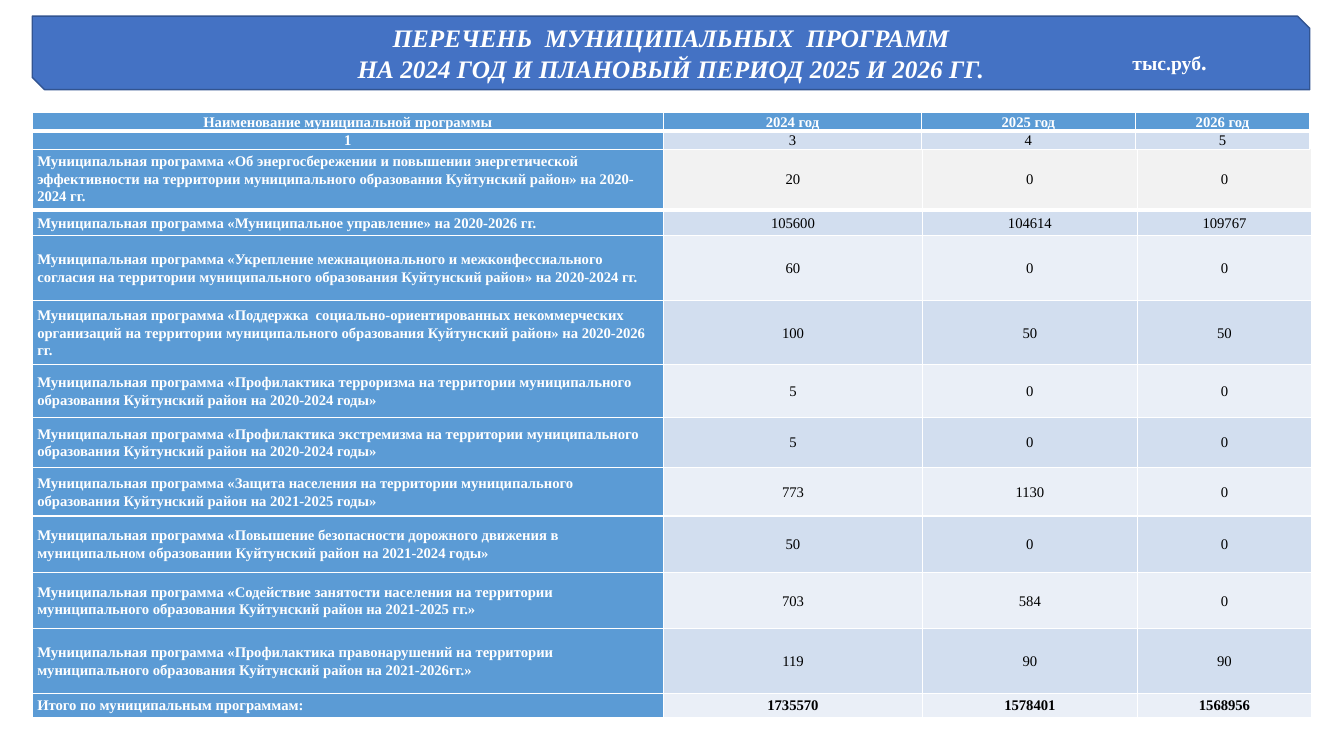
from lxml import etree
from pptx import Presentation
from pptx.dml.color import RGBColor
from pptx.enum.shapes import MSO_SHAPE
from pptx.enum.text import MSO_ANCHOR, MSO_AUTO_SIZE, PP_ALIGN
from pptx.oxml.ns import qn
from pptx.util import Inches, Pt

SNIPPED = MSO_SHAPE.SNIP_2_DIAG_RECTANGLE
MIDDLE, BOTTOM, TOP = MSO_ANCHOR.MIDDLE, MSO_ANCHOR.BOTTOM, MSO_ANCHOR.TOP
LEFT, CENTER, RIGHT = PP_ALIGN.LEFT, PP_ALIGN.CENTER, PP_ALIGN.RIGHT
NO_AUTOFIT = MSO_AUTO_SIZE.NONE

WHITE = RGBColor(0xFF, 0xFF, 0xFF)
BLACK = RGBColor(0, 0, 0)
BANNER_BLUE = RGBColor(0x44, 0x72, 0xC4)
BANNER_EDGE = RGBColor(0x32, 0x54, 0x91)
NAME_BLUE = RGBColor(0x5B, 0x9B, 0xD5)
GREY = RGBColor(0xF2, 0xF2, 0xF2)
BAND_DARK = RGBColor(0xD2, 0xDE, 0xEF)
BAND_LIGHT = RGBColor(0xEA, 0xEF, 0xF7)
FONT = "Times New Roman"

TITLE = ["ПЕРЕЧЕНЬ  МУНИЦИПАЛЬНЫХ  ПРОГРАММ",
         "НА 2024 ГОД И ПЛАНОВЫЙ ПЕРИОД 2025 И 2026 ГГ."]
UNIT = [("тыс.руб", 14), (".", 16)]

HEADER = [
    ("Наименование муниципальной программы", "2024 год", "2025 год", "2026 год"),
    ("1", "3", "4", "5"),
]
HEADER_COLUMNS = [6.26, 2.56, 2.12, 1.73]
HEADER_HEIGHTS = [0.18, 0.18]

PROGRAMS = [
    ("Муниципальная программа «Об энергосбережении и повышении энергетической эффективности "
     "на территории муниципального образования Куйтунский район» на 2020-2024 гг.",
     "20", "0", "0"),
    ("Муниципальная программа «Муниципальное управление» на 2020-2026 гг.",
     "105600", "104614", "109767"),
    ("Муниципальная программа «Укрепление межнационального и межконфессиального согласия "
     "на территории муниципального образования Куйтунский район» на 2020-2024 гг.",
     "60", "0", "0"),
    ("Муниципальная программа «Поддержка  социально-ориентированных некоммерческих организаций "
     "на территории муниципального образования Куйтунский район» на 2020-2026 гг.",
     "100", "50", "50"),
    ("Муниципальная программа «Профилактика терроризма на территории муниципального "
     "образования Куйтунский район на 2020-2024 годы»", "5", "0", "0"),
    ("Муниципальная программа «Профилактика экстремизма на территории муниципального "
     "образования Куйтунский район на 2020-2024 годы»", "5", "0", "0"),
    ("Муниципальная программа «Защита населения на территории муниципального "
     "образования Куйтунский район на 2021-2025 годы»", "773", "1130", "0"),
    ("Муниципальная программа «Повышение безопасности дорожного движения в муниципальном "
     "образовании Куйтунский район на 2021-2024 годы»", "50", "0", "0"),
    ("Муниципальная программа «Содействие занятости населения на территории муниципального "
     "образования Куйтунский район на 2021-2025 гг.»", "703", "584", "0"),
    ("Муниципальная программа «Профилактика правонарушений на территории муниципального "
     "образования Куйтунский район на 2021-2026гг.»", "119", "90", "90"),
    ("Итого по муниципальным программам:", "1735570", "1578401", "1568956"),
]
PROGRAM_COLUMNS = [6.26, 2.57, 2.13, 1.73]
PROGRAM_HEIGHTS = [0.61, 0.26, 0.64, 0.64, 0.52, 0.5, 0.48, 0.56, 0.56, 0.64, 0.24]

BANNER_BOX = [Inches(v) for v in (0.32, 0.16, 12.67, 0.73)]
TABLE_LEFT = 0.32


def set_font(font, size, color=WHITE, bold=True, italic=False):
    font.name, font.size, font.bold, font.italic = FONT, Pt(size), bold, italic
    font.color.rgb = color


def set_borders(cell, bottom_width):
    properties = cell._tc.get_or_add_tcPr()
    widths = {"a:lnL": 1, "a:lnR": 1, "a:lnT": 1, "a:lnB": bottom_width}
    for position, (side, width) in enumerate(widths.items()):
        line = etree.Element(qn(side), w=str(Pt(width)))
        fill = etree.SubElement(line, qn("a:solidFill"))
        etree.SubElement(fill, qn("a:srgbClr"), val=str(WHITE))
        properties.insert(position, line)


def style_cell(cell, text, fill, color, bold, align, inset, anchor, bottom_width):
    cell.text = text
    cell.margin_left = cell.margin_right = Inches(inset)
    cell.margin_top = cell.margin_bottom = 0
    cell.vertical_anchor = anchor
    paragraph = cell.text_frame.paragraphs[0]
    paragraph.alignment = align
    paragraph.line_spacing = 1.07
    set_font(paragraph.font, 10.5, color, bold)
    cell.fill.solid()
    cell.fill.fore_color.rgb = fill
    set_borders(cell, bottom_width)


def add_grid(slide, top, columns, heights):
    grid = slide.shapes.add_table(
        len(heights), len(columns), Inches(TABLE_LEFT), Inches(top),
        Inches(sum(columns)), Inches(sum(heights))).table
    grid.first_row = grid.horz_banding = False
    for column, width in zip(grid.columns, columns):
        column.width = Inches(width)
    for row, height in zip(grid.rows, heights):
        row.height = Inches(height)
    return grid


def add_banner(slide):
    banner = slide.shapes.add_shape(SNIPPED, *BANNER_BOX)
    banner.shadow.inherit = False
    banner.fill.solid()
    banner.fill.fore_color.rgb = BANNER_BLUE
    banner.line.color.rgb = BANNER_EDGE
    banner.line.width = Pt(1)
    frame = banner.text_frame
    frame.vertical_anchor = BOTTOM
    frame.margin_right, frame.margin_bottom = Inches(0.96), Inches(0.08)
    unit = frame.paragraphs[0]
    unit.alignment = RIGHT
    for text, size in UNIT:
        run = unit.add_run()
        run.text = text
        set_font(run.font, size)

    title = slide.shapes.title
    title.left, title.top, title.width, title.height = BANNER_BOX
    frame = title.text_frame
    frame.text = "\n".join(TITLE)
    frame.auto_size = NO_AUTOFIT
    frame.vertical_anchor = MIDDLE
    for paragraph in frame.paragraphs:
        paragraph.alignment = CENTER
        set_font(paragraph.font, 18, italic=True)
    title._element.addprevious(banner._element)


def add_programs(slide):
    grid = add_grid(slide, 1.47, PROGRAM_COLUMNS, PROGRAM_HEIGHTS)
    for r, program in enumerate(PROGRAMS):
        band = GREY if r == 0 else BAND_DARK if r % 2 else BAND_LIGHT
        is_total = r == len(PROGRAMS) - 1
        for c, text in enumerate(program):
            look = (band, BLACK, is_total, CENTER) if c else (NAME_BLUE, WHITE, True, LEFT)
            style_cell(grid.cell(r, c), text, *look, 0.05, MIDDLE, 1 if r else 3)


def add_header(slide):
    grid = add_grid(slide, 1.12, HEADER_COLUMNS, HEADER_HEIGHTS)
    for r, labels in enumerate(HEADER):
        for c, text in enumerate(labels):
            look = (BAND_DARK, BLACK, False) if r and c else (NAME_BLUE, WHITE, True)
            anchor = TOP if r and c > 1 else MIDDLE
            style_cell(grid.cell(r, c), text, *look, CENTER, 0.07, anchor, 1 if r else 3)


def main():
    deck = Presentation()
    deck.slide_width, deck.slide_height = Inches(13.33), Inches(7.5)
    slide = deck.slides.add_slide(deck.slide_layouts[5])
    add_banner(slide)
    add_programs(slide)
    add_header(slide)
    deck.save("out.pptx")


if __name__ == "__main__":
    main()
